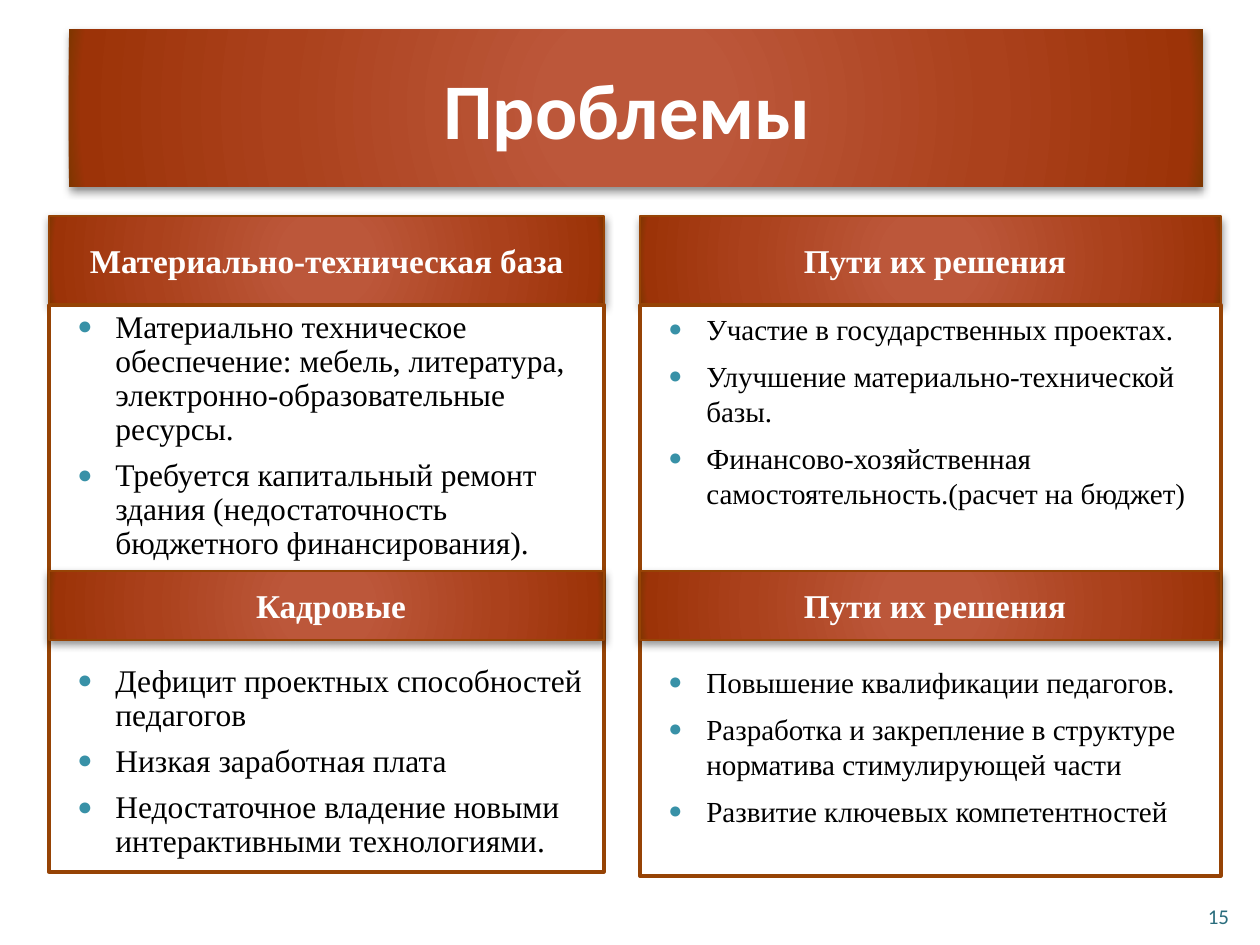
"""Build the slide of problems and ways to solve them."""
from lxml import etree
from pptx import Presentation
from pptx.dml.color import RGBColor as Rgb
from pptx.enum.shapes import MSO_SHAPE as Kind
from pptx.enum.text import MSO_ANCHOR as Anchor, PP_ALIGN as Align
from pptx.oxml.ns import qn
from pptx.util import Emu, Pt

HUE = {"white": "FFFFFF", "black": "000000", "rust": "964305",
       "teal": "3891A7", "page": "2A6D7D"}
STOPS = [(0, "BD583A"), (15, "BC573A"), (62, "AB411C"), (97, "9C3308"), (100, "7E3600")]
SERIF, SANS = "Times New Roman", "Calibri"
TITLE = ("Проблемы ", (69, 29, 1134, 158))
PAGE = ("15", (1187, 869, 63, 66))
TOP, MID, BODY = (216, 88), (571, 69), 305
COLS = [
    {"x": 49, "w": 555, "h": 567, "size": 18, "lead": 0.9, "gap": 59,
     "parts": [
         ("Материально-техническая база ", [
             "Материально техническое обеспечение: мебель, литература, электронно-образовательные ресурсы.",
             "Требуется капитальный ремонт здания (недостаточность бюджетного финансирования)."]),
         ("Кадровые", [
             "Дефицит проектных способностей педагогов",
             "Низкая заработная плата",
             "Недостаточное владение новыми интерактивными технологиями."])]},
    {"x": 640, "w": 581, "h": 571, "size": 16.6, "lead": 1.0, "gap": 88,
     "parts": [
         ("Пути их решения", [
             "Участие в государственных проектах.",
             "Улучшение материально-технической базы.",
             "Финансово-хозяйственная самостоятельность.(расчет на бюджет)"]),
         ("Пути их решения", [
             "Повышение квалификации педагогов.",
             "Разработка и закрепление в структуре норматива стимулирующей части",
             "Развитие ключевых компетентностей"])]},
]


def px(n):
    return Emu(round(n * 914400 / 126))


def sub(node, tag, **atts):
    return etree.SubElement(node, qn("a:" + tag), {k: str(v) for k, v in atts.items()})


def write(para, text, size, face, hue, bold=False):
    run = para.add_run()
    run.text = text
    font = run.font
    font.size, font.name, font.bold = Pt(size), face, bold
    font.color.rgb = Rgb.from_string(HUE[hue])


def box(slide, area, line=None):
    shape = slide.shapes.add_shape(Kind.RECTANGLE, *map(px, area))
    shape.shadow.inherit = False
    shape.fill.solid()
    shape.fill.fore_color.rgb = Rgb.from_string(HUE["white"])
    if line:
        shape.line.color.rgb = Rgb.from_string(HUE["rust"])
        shape.line.width = Pt(line)
    else:
        shape.line.fill.background()
    shape.text_frame.word_wrap = True
    return shape


def glow(shape):
    props = shape.fill._xPr
    old = props.find(qn("a:solidFill"))
    grad = etree.Element(qn("a:gradFill"), rotWithShape="1")
    stops = sub(grad, "gsLst")
    for pos, hue in STOPS:
        sub(sub(stops, "gs", pos=pos * 1000), "srgbClr", val=hue)
    sub(sub(grad, "path", path="circle"), "fillToRect", l=50000, t=50000, r=50000, b=50000)
    props.replace(old, grad)
    shade = sub(props.find(qn("a:effectLst")), "outerShdw", blurRad=Pt(5), dist=Pt(2),
                dir=5400000, algn="ctr", rotWithShape=0)
    sub(sub(shade, "srgbClr", val=HUE["black"]), "alpha", val=43000)


def band(slide, text, area, size, face, line=None, left=0):
    shape = box(slide, area, line)
    glow(shape)
    frame = shape.text_frame
    frame.vertical_anchor = Anchor.MIDDLE
    para = frame.paragraphs[0]
    para.alignment = Align.CENTER
    para._p.get_or_add_pPr().set("marL", str(px(left)))
    write(para, text, size, face, "white", True)


def bullet(para):
    props = para._p.get_or_add_pPr()
    props.set("marL", str(px(54)))
    props.set("indent", str(px(-38)))
    sub(sub(props, "buClr"), "srgbClr", val=HUE["teal"])
    sub(props, "buSzPct", val=80000)
    sub(props, "buFont", typeface="Arial")
    sub(props, "buChar", char="●")


def body(slide, col):
    frame = box(slide, (col["x"], BODY, col["w"], col["h"]), 2).text_frame
    frame.vertical_anchor = Anchor.TOP
    para = frame.paragraphs[0]
    for part, (_, items) in enumerate(col["parts"]):
        for i, text in enumerate(items):
            if part or i:
                para = frame.add_paragraph()
            para.alignment = Align.LEFT
            para.line_spacing = col["lead"]
            para.space_before = Pt(col["gap"] if part and not i else 7)
            bullet(para)
            write(para, text, col["size"], SERIF, "black")


def main():
    deck = Presentation()
    deck.slide_width, deck.slide_height = px(1260), px(945)
    slide = deck.slides.add_slide(deck.slide_layouts[6])
    band(slide, *TITLE, 45, SANS)
    for row, (y, h) in enumerate((TOP, MID)):
        for col in COLS:
            area = (col["x"], y, col["w"], h)
            band(slide, col["parts"][row][0], area, 19, SERIF, 0.75, 9)
            if not row:
                body(slide, col)
    text, area = PAGE
    frame = slide.shapes.add_textbox(*map(px, area)).text_frame
    frame.word_wrap = True
    frame.vertical_anchor = Anchor.BOTTOM
    frame.paragraphs[0].alignment = Align.CENTER
    write(frame.paragraphs[0], text, 12, SANS, "page")
    deck.save("out.pptx")


if __name__ == "__main__":
    main()
